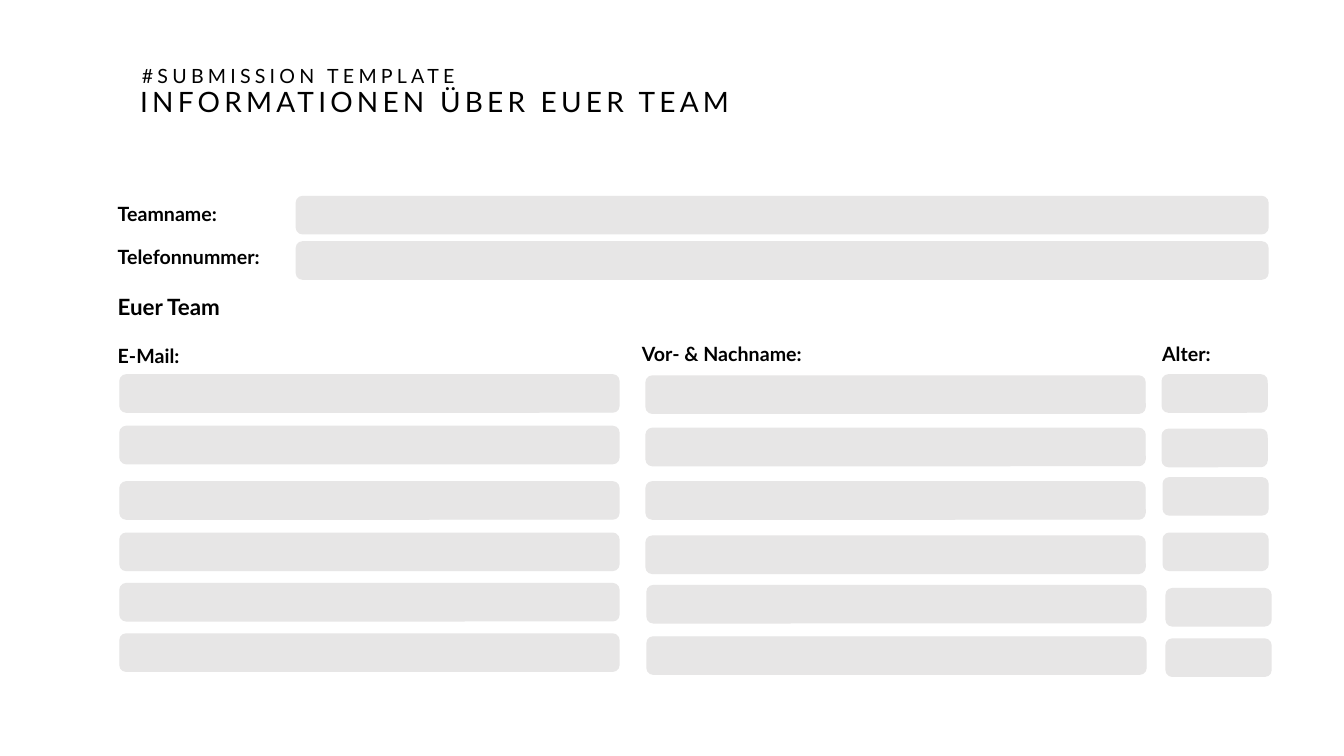
from pptx import Presentation
from pptx.dml.color import RGBColor
from pptx.enum.shapes import MSO_SHAPE
from pptx.enum.text import MSO_ANCHOR, MSO_AUTO_SIZE, PP_ALIGN
from pptx.util import Pt

FONT = "Lato"
BLACK = "000000"
FIELD_GREY = "E7E6E6"
FIELD_HEIGHT = 26.6

LABELS = [
    ("Teamname:", 77, 140.4, 562, 14),
    ("Telefonnummer:", 77, 171.4, 562, 14),
    ("Euer Team", 77, 205.9, 562, 16),
    ("E-Mail:", 77, 241.9, 364, 14),
    ("Vor- & Nachname:", 451.4, 240.5, 230, 14),
    ("Alter:", 823, 240.5, 95, 14),
]
TEAM_FIELD_TOPS = [140.4, 172.8]
MEMBER_COLUMNS = [
    (356.4, [(85.7, 267.8), (85.7, 304.6), (85.7, 344.2),
             (85.7, 380.9), (85.7, 416.9), (85.7, 452.9)]),
    (356.4, [(461.5, 268.6), (461.5, 306), (461.5, 344.2),
             (461.5, 383), (462.2, 418.3), (462.2, 455)]),
    (74.9, [(830.2, 267.8), (830.2, 306.7), (830.9, 341.3),
            (830.9, 380.9), (833, 420.5), (833, 456.5)]),
]


def color(hex_string):
    """Turn a hex string into a colour."""
    return RGBColor.from_string(hex_string)


def write(box, text, size, bold=False, spacing=0):
    """Put one left-aligned line of text into a box."""
    frame = box.text_frame
    frame.word_wrap = True
    frame.auto_size = MSO_AUTO_SIZE.NONE
    frame.vertical_anchor = MSO_ANCHOR.TOP
    line = frame.paragraphs[0]
    line.alignment = PP_ALIGN.LEFT
    line.line_spacing = 1.0
    run = line.add_run()
    run.text = text
    if spacing:
        run._r.get_or_add_rPr().set("spc", str(spacing * 100))
    line.font.name = FONT
    line.font.size = Pt(size)
    line.font.bold = bold
    line.font.color.rgb = color(BLACK)


def add_title(slide, text):
    """Move and format the title placeholder."""
    title = slide.shapes.title
    title.left, title.top = Pt(92.9), Pt(56.9)
    title.width, title.height = Pt(825), Pt(31.5)
    write(title, text, 20, spacing=3)


def add_label(slide, text, left, top, width, size, bold=True, spacing=0):
    """Add a one-line text box."""
    label = slide.shapes.add_textbox(Pt(left), Pt(top), Pt(width), Pt(size * 1.2 + 7.2))
    write(label, text, size, bold, spacing)


def add_field(slide, left, top, width):
    """Add a rounded grey entry field."""
    field = slide.shapes.add_shape(
        MSO_SHAPE.ROUNDED_RECTANGLE, Pt(left), Pt(top), Pt(width), Pt(FIELD_HEIGHT))
    field.shadow.inherit = False
    field.fill.solid()
    field.fill.fore_color.rgb = color(FIELD_GREY)
    field.line.color.rgb = color(FIELD_GREY)
    field.line.width = Pt(1)


def main():
    """Build the team information form."""
    deck = Presentation()
    deck.slide_width, deck.slide_height = Pt(960), Pt(540)
    slide = deck.slides.add_slide(deck.slide_layouts[5])

    add_title(slide, "INFORMATIONEN ÜBER EUER TEAM")
    add_label(slide, "#SUBMISSION TEMPLATE", 94.3, 41.8, 825, 14, bold=False, spacing=3)
    for label in LABELS:
        add_label(slide, *label)
    for top in TEAM_FIELD_TOPS:
        add_field(slide, 211.7, top, 694)
    for width, places in MEMBER_COLUMNS:
        for left, top in places:
            add_field(slide, left, top, width)

    deck.save("out.pptx")


if __name__ == "__main__":
    main()
